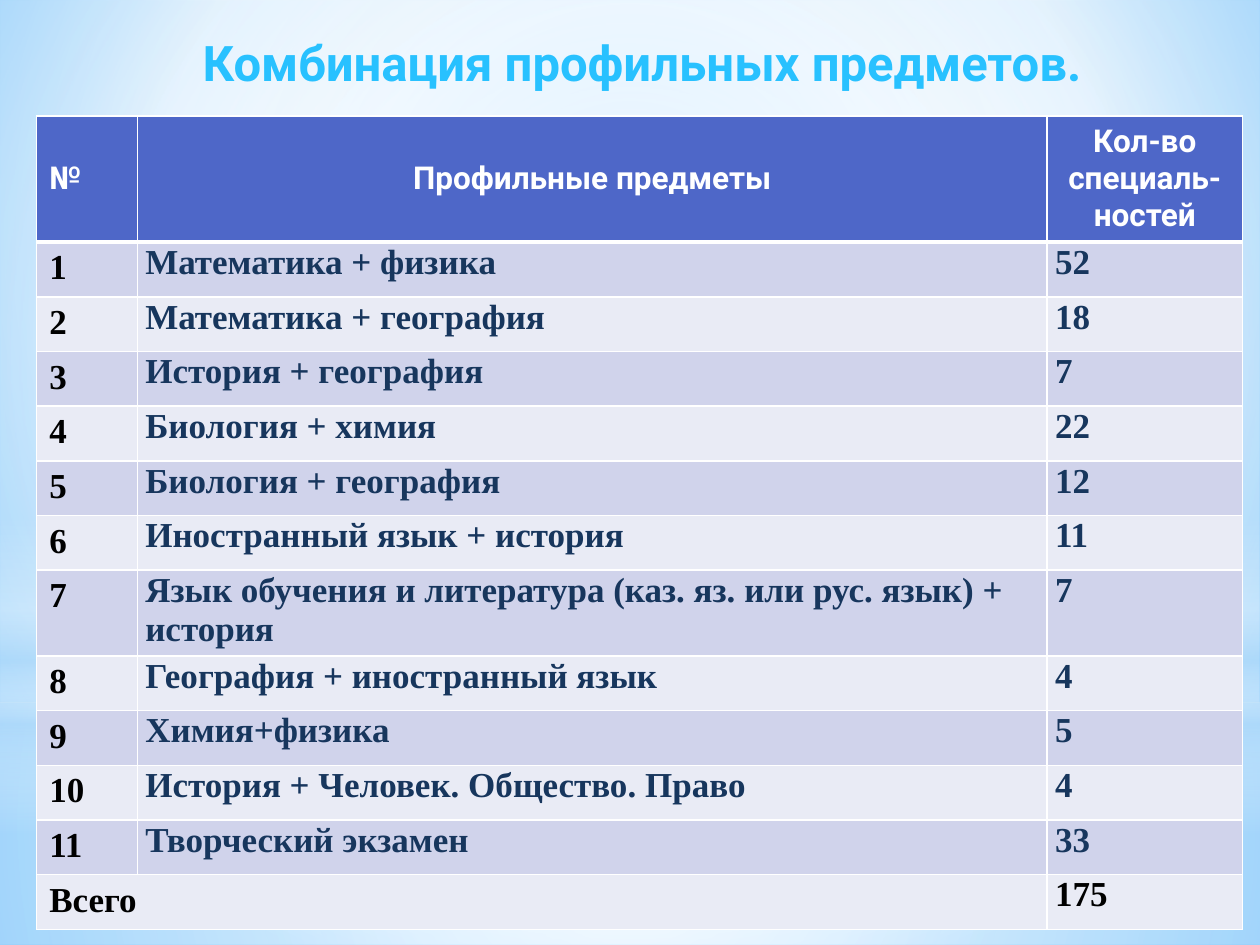
import pptx
import pptx.util
import pptx.oxml
import pptx.oxml.ns
from pptx.dml.color import RGBColor
from pptx.enum.shapes import MSO_SHAPE
from pptx.enum.text import MSO_ANCHOR, PP_ALIGN

Cm, Pt = pptx.util.Cm, pptx.util.Pt
COLORS = {"white": "FFFFFF", "haze": "B4DCFA", "header": "4E67C8",
          "odd": "D0D3EB", "even": "E9EBF5", "navy": "17365D", "black": "000000",
          "sky": "9ED5FF", "azure": "5BB9FF",
          "title_top": "9DE0FF", "title_mid": "28C1FF", "title_end": "00B8F9"}
HEADER = ["№", "Профильные предметы", "Кол-во специаль-ностей"]
SUBJECTS = [
    ("Математика + физика", 52),
    ("Математика + география", 18),
    ("История + география", 7),
    ("Биология + химия", 22),
    ("Биология + география", 12),
    ("Иностранный язык + история", 11),
    ("Язык обучения и литература (каз. яз. или рус. язык) + история", 7),
    ("География + иностранный язык", 4),
    ("Химия+физика", 5),
    ("История + Человек. Общество. Право", 4),
    ("Творческий экзамен", 33),
]


def rgb(name):
    return RGBColor.from_string(COLORS[name])


def set_gradient(fill, element, stops, to=None):
    """Stops are (percent, color, opacity); `to` is the centre rectangle l, t, r, b."""
    fill.solid()
    old = element.xpath(".//a:solidFill")[0]
    gs = "".join(
        f'<a:gs pos="{pos * 1000}"><a:srgbClr val="{COLORS[c]}">'
        f'<a:alpha val="{alpha * 1000}"/></a:srgbClr></a:gs>' for pos, c, alpha in stops)
    if to:
        sides = " ".join(f'{k}="{v * 1000}"' for k, v in zip("ltrb", to))
        shade = f'<a:path path="circle"><a:fillToRect {sides}/></a:path>'
    else:
        shade = '<a:lin ang="5400000" scaled="0"/>'
    new = pptx.oxml.parse_xml(
        f'<a:gradFill {pptx.oxml.ns.nsdecls("a")} rotWithShape="1">'
        f'<a:gsLst>{gs}</a:gsLst>{shade}</a:gradFill>')
    old.getparent().replace(old, new)


def write(tf, text, align, **font):
    p = tf.paragraphs[0]
    p.alignment = align
    r = p.add_run()
    r.text = text
    for name, value in font.items():
        setattr(r.font, name, value)
    return r


def add_backdrop(s, w, h):
    set_gradient(s.background.fill, s.element,
                 [(0, "sky", 100), (60, "white", 100), (100, "azure", 100)],
                 (20, 10, 20, 60))
    centre = (50, 50, 50, 50)
    split = 14.17
    layers = [
        (MSO_SHAPE.RECTANGLE, split, h - split, centre,
         [(0, "white", 91), (37, "white", 76), (100, "haze", 79)]),
        (MSO_SHAPE.RECTANGLE, 0, split, centre,
         [(0, "white", 89), (48, "white", 62), (100, "haze", 79)]),
        (MSO_SHAPE.RECTANGLE, 10.46, 6.35, None,
         [(0, "white", 0), (29, "white", 30), (45, "haze", 40),
          (55, "white", 26), (65, "haze", 60), (100, "white", 0)]),
        (MSO_SHAPE.OVAL, 4.45, split, centre, [(0, "white", 100), (56, "white", 0)]),
    ]
    for kind, top, height, to, stops in layers:
        sp = s.shapes.add_shape(kind, 0, Cm(top), Cm(w), Cm(height))
        sp.shadow.inherit = False
        set_gradient(sp.fill, sp.element, stops, to)
        sp.line.fill.background()


def add_title(s, x, y, w, h):
    tf = s.shapes.add_textbox(Cm(x), Cm(y), Cm(w), Cm(h)).text_frame
    tf.word_wrap = True
    r = write(tf, "Комбинация профильных предметов.", PP_ALIGN.CENTER,
              size=Pt(28), name="Roboto", bold=True)
    set_gradient(r.font.fill, tf.paragraphs[0]._p,
                 [(0, "title_top", 100), (75, "title_mid", 100), (100, "title_end", 100)])


def set_borders(cell, widths):
    """Widths in points for the left, right, top and bottom sides."""
    tcPr = cell._tc.get_or_add_tcPr()
    for i, (side, width) in enumerate(zip("LRTB", widths)):
        tcPr.insert(i, pptx.oxml.parse_xml(
            f'<a:ln{side} {pptx.oxml.ns.nsdecls("a")} w="{int(Pt(width))}">'
            f'<a:solidFill><a:srgbClr val="{COLORS["white"]}"/></a:solidFill></a:ln{side}>'))


def add_subject_table(s, x, y, w, h):
    rows = [HEADER]
    rows += [(str(i), name, str(n)) for i, (name, n) in enumerate(SUBJECTS, 1)]
    rows.append(("Всего", "", str(sum(n for _, n in SUBJECTS))))
    last = len(rows) - 1
    table = s.shapes.add_table(len(rows), 3, Cm(x), Cm(y), Cm(w), Cm(h)).table

    # Column widths and row heights
    number_w, count_w = 2.03, 3.94
    for col, width in zip(table.columns, (number_w, w - number_w - count_w, count_w)):
        col.width = Cm(width)
    for i, row in enumerate(table.rows):
        row.height = Cm({0: 2.54, 7: 1.73}.get(i, 1.1))

    # Cells
    insets = {"margin_left": Cm(0.16), "margin_right": Cm(0.16),
              "margin_top": Cm(0.02), "margin_bottom": 0}
    for i, values in enumerate(rows):
        for j, text in enumerate(values):
            cell = table.cell(i, j)
            cell.fill.solid()
            cell.fill.fore_color.rgb = rgb("header" if i == 0 else "odd" if i % 2 else "even")
            set_borders(cell, (1, 1, 3 if i == 1 else 1, 3 if i == 0 else 1))
            if i == 0:
                cell.vertical_anchor = MSO_ANCHOR.MIDDLE
                font = {"size": Pt(18), "name": "Roboto"}
                color = "white"
            else:
                font = {"size": Pt(20), "name": "Times New Roman"}
                color = "black" if j == 0 or i == last else "navy"
                for name, value in insets.items() if j else ():
                    setattr(cell, name, value)
            if text:
                align = PP_ALIGN.CENTER if i == 0 and j else PP_ALIGN.LEFT
                r = write(cell.text_frame, text, align, bold=True, **font)
                r.font.color.rgb = rgb(color)
    table.cell(last, 0).merge(table.cell(last, 1))


def main():
    w, h = 25.4, 19.05
    prs = pptx.Presentation()
    prs.slide_width, prs.slide_height = Cm(w), Cm(h)
    s = prs.slides.add_slide(prs.slide_layouts[6])
    add_backdrop(s, w, h)
    add_title(s, 0.84, 0.53, 24.2, 2.64)
    add_subject_table(s, 0.74, 2.34, 24.31, 16.37)
    prs.save("out.pptx")


if __name__ == "__main__":
    main()
